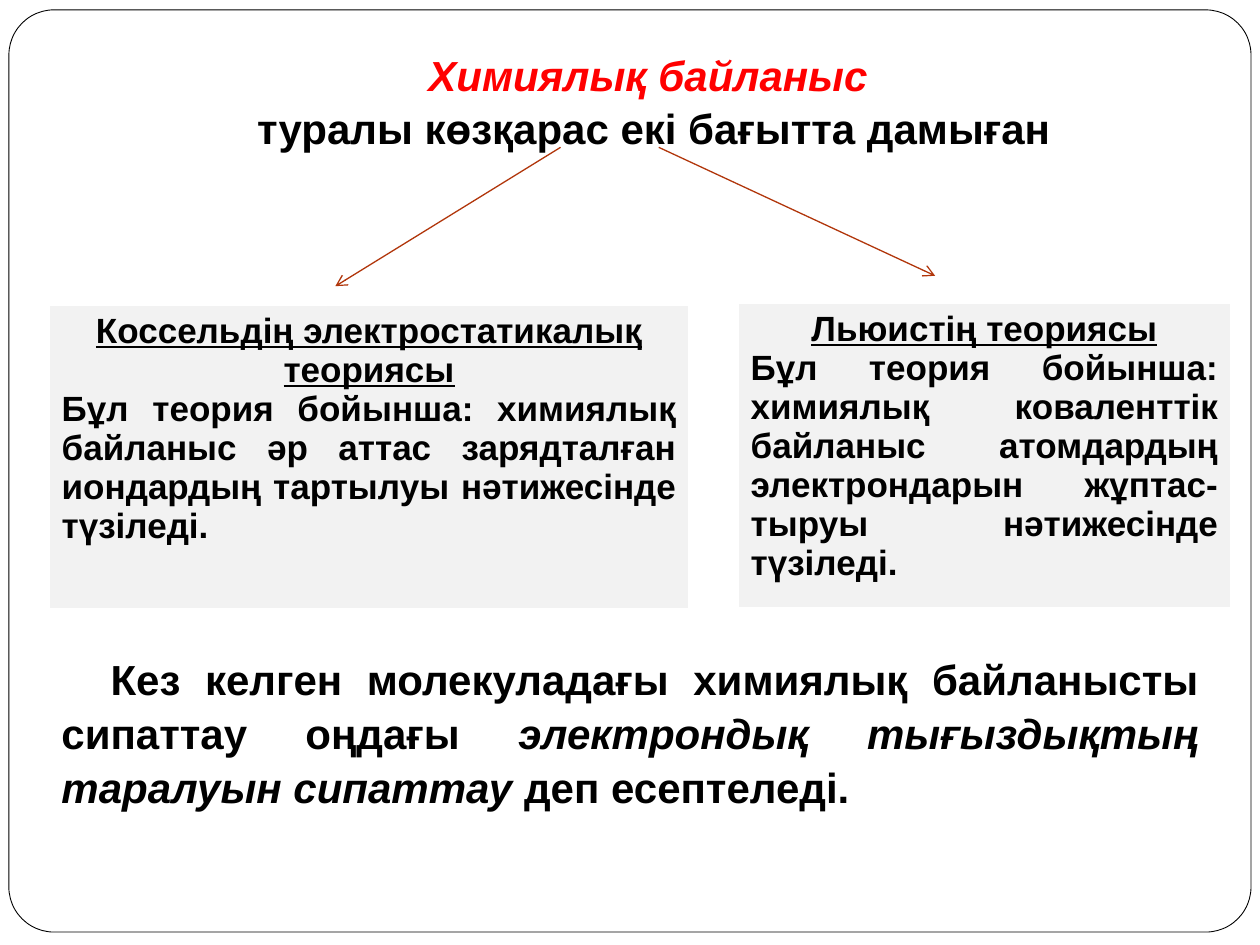
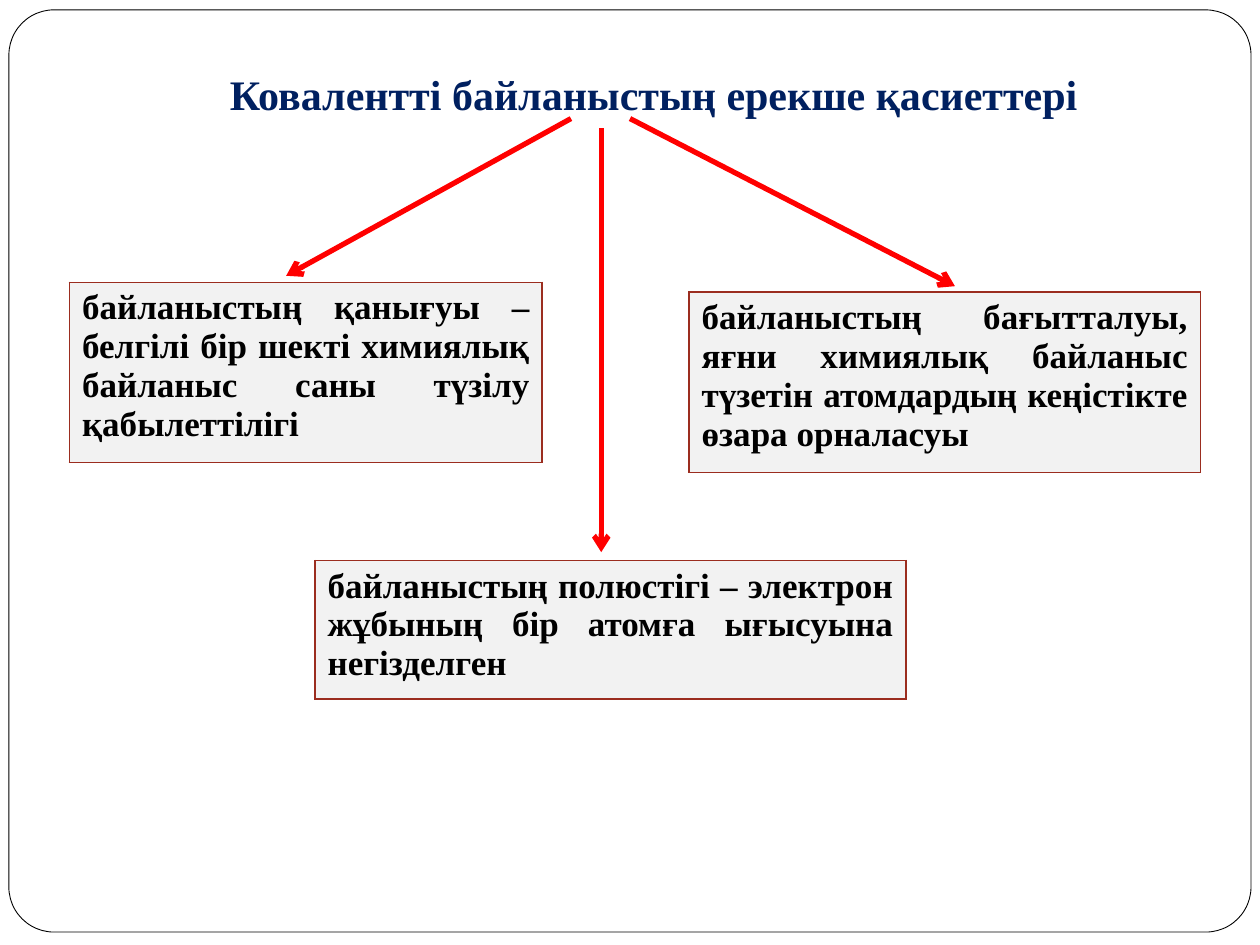
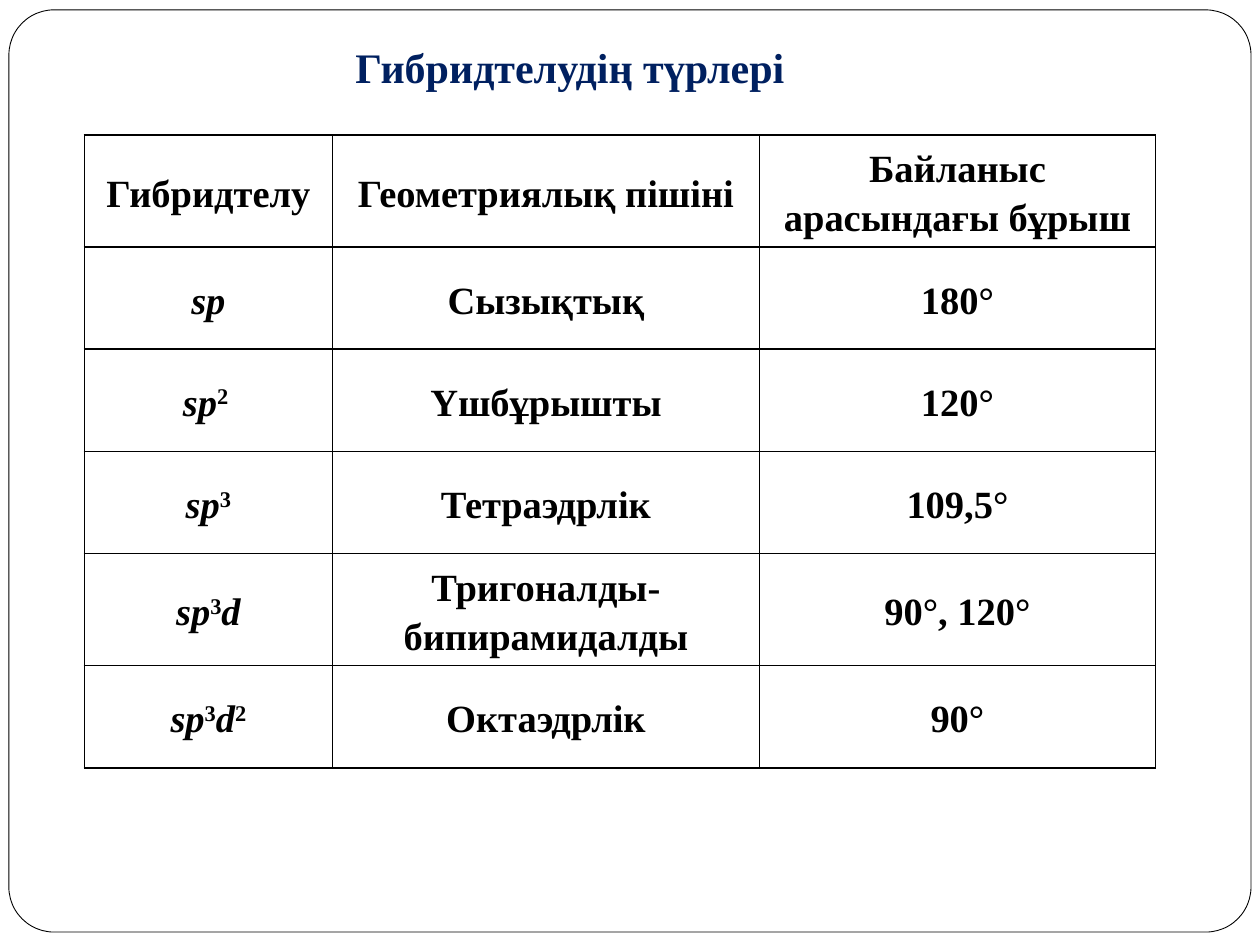
from itertools import groupby

from lxml import etree
from pptx import Presentation
from pptx.dml.color import RGBColor
from pptx.enum.shapes import MSO_CONNECTOR, MSO_SHAPE
from pptx.enum.text import MSO_ANCHOR, MSO_AUTO_SIZE, PP_ALIGN
from pptx.oxml.ns import qn
from pptx.util import Cm, Pt

BLACK = RGBColor(0x00, 0x00, 0x00)
WHITE = RGBColor(0xFF, 0xFF, 0xFF)
RED = RGBColor(0xFF, 0x00, 0x00)
NAVY = RGBColor(0x00, 0x20, 0x60)
RUST = RGBColor(0xB1, 0x36, 0x0B)
BRICK = RGBColor(0x9B, 0x2D, 0x1F)
PALE_GREY = RGBColor(0xF2, 0xF2, 0xF2)

SANS = "Arial"
SERIF = "Times New Roman"
TITLE_ONLY = 5
LEFT, CENTER, JUSTIFY = PP_ALIGN.LEFT, PP_ALIGN.CENTER, PP_ALIGN.JUSTIFY
TOP, MIDDLE, BOTTOM = MSO_ANCHOR.TOP, MSO_ANCHOR.MIDDLE, MSO_ANCHOR.BOTTOM
STRAIGHT = MSO_CONNECTOR.STRAIGHT
ROUNDED = MSO_SHAPE.ROUNDED_RECTANGLE
NO_AUTOFIT = MSO_AUTO_SIZE.NONE


def add_span(para, text, font=SANS, size=24, color=BLACK, italic=False,
             underline=False, raised=False):
    span = para.add_run()
    span.text = text
    span.font.name = font
    span.font.size = Pt(size)
    span.font.color.rgb = color
    span.font.bold = True
    span.font.italic = italic
    span.font.underline = underline
    if raised:
        span.font._element.set("baseline", "30000")


def add_paragraph(frame, spans, align=JUSTIFY, spacing=None, indent=0, **text_format):
    first = frame.paragraphs[0]
    para = frame.add_paragraph() if first.runs else first
    para.alignment = align
    para.line_spacing = spacing
    para.space_before = Pt(0)
    if indent:
        para._p.get_or_add_pPr().set("indent", str(Cm(indent)))
    for text, changes in spans:
        add_span(para, text, **{**text_format, **changes})


def set_title(page, area, lines, align=CENTER, spacing=1.07, anchor=TOP, **text_format):
    title = page.shapes.title
    title.left, title.top, title.width, title.height = map(Cm, area)
    frame = title.text_frame
    frame.word_wrap = True
    frame.auto_size = NO_AUTOFIT
    frame.vertical_anchor = anchor
    for line in lines:
        add_paragraph(frame, [line], align, spacing, **text_format)
    return frame


def add_frame_to_master(deck, page):
    outline = page.shapes.add_shape(ROUNDED, Cm(0.18), Cm(0.2), Cm(25.04), Cm(18.59))
    outline.adjustments[0] = 0.049
    outline.shadow.inherit = False
    outline.fill.solid()
    outline.fill.fore_color.rgb = WHITE
    outline.line.color.rgb = BLACK
    outline.line.width = Pt(0.5)
    outline.element.nvSpPr.cNvPr.set("id", "20")
    deck.slide_master.shapes.element.insert(2, outline.element)


def add_arrow(page, start, end, color, width):
    arrow = page.shapes.add_connector(STRAIGHT, *map(Cm, start + end))
    arrow.line.color.rgb = color
    arrow.line.width = Pt(width)
    properties = arrow.element.spPr
    etree.SubElement(properties.find(qn("a:ln")), qn("a:tailEnd"), type="arrow")
    etree.SubElement(properties, qn("a:effectLst"))


def set_borders(cell, color, width=1, bottom=1):
    properties = cell._tc.get_or_add_tcPr()
    sides = {"lnL": width, "lnR": width, "lnT": width, "lnB": bottom}
    for index, (side, points) in enumerate(sides.items()):
        line = etree.Element(qn(f"a:{side}"), w=str(Pt(points)))
        fill = etree.SubElement(line, qn("a:solidFill"))
        etree.SubElement(fill, qn("a:srgbClr"), val=str(color))
        properties.insert(index, line)


def add_plain_table(page, left, top, widths, heights):
    table = page.shapes.add_table(
        len(heights), len(widths), Cm(left), Cm(top),
        Cm(sum(widths)), Cm(sum(heights))).table
    table.first_row = False
    table.horz_banding = False
    for column, width in zip(table.columns, widths):
        column.width = Cm(width)
    for row, height in zip(table.rows, heights):
        row.height = Cm(height)
    return table


def add_panel(page, area, text, border, bottom=1, heading=None, font=SANS):
    left, top, width, height = area
    cell = add_plain_table(page, left, top, [width], [height]).cell(0, 0)
    cell.fill.solid()
    cell.fill.fore_color.rgb = PALE_GREY
    set_borders(cell, border, bottom=bottom)
    if heading:
        add_paragraph(cell.text_frame, [(heading, {"underline": True})], CENTER,
                      font=font, size=20)
    add_paragraph(cell.text_frame, [(text, {})], font=font, size=20)


def split_formula(formula):
    for is_letter, letters in groupby(formula, str.isalpha):
        yield "".join(letters), {"italic": is_letter, "raised": not is_letter}


def fill_grid_cell(cell, spans):
    cell.fill.background()
    set_borders(cell, BLACK)
    cell.vertical_anchor = MIDDLE
    cell.margin_left = cell.margin_right = Cm(0.05)
    cell.margin_top = cell.margin_bottom = Cm(0.05)
    add_paragraph(cell.text_frame, spans, CENTER, 1.15, font=SERIF, size=22)


def build_theories(page):
    set_title(page, (1.48, 0.79, 23.4, 2.2), [
        ("Химиялық байланыс ", {"color": RED, "italic": True}),
        ("туралы көзқарас екі бағытта дамыған", {}),
    ])
    add_arrow(page, (11.3, 2.97), (6.76, 5.77), RUST, 0.75)
    add_arrow(page, (13.28, 2.97), (18.85, 5.56), RUST, 0.75)
    add_panel(page, (0.99, 6.15, 12.9, 6.15),
              "Бұл теория бойынша: химиялық байланыс әр аттас зарядталған "
              "иондардың тартылуы нәтижесінде түзіледі.",
              WHITE, 3, "Коссельдің электростатикалық теориясы")
    add_panel(page, (14.88, 6.12, 9.93, 6.17),
              "Бұл теория бойынша: химиялық коваленттік байланыс атомдардың "
              "электрондарын жұптас-тыруы нәтижесінде түзіледі.",
              WHITE, 3, "Льюистің теориясы")
    box = page.shapes.add_textbox(Cm(0.99), Cm(12.98), Cm(23.42), Cm(3.5))
    box.text_frame.word_wrap = True
    add_paragraph(box.text_frame, [
        ("Кез келген молекуладағы химиялық байланысты сипаттау оңдағы ", {}),
        ("электрондық тығыздықтың таралуын сипаттау", {"italic": True}),
        (" деп есептеледі.", {}),
    ], spacing=1.07, indent=0.99)


def build_properties(page):
    set_title(page, (1.75, 1.19, 22.86, 1.3),
              [("Ковалентті байланыстың ерекше қасиеттері", {})],
              font=SERIF, color=NAVY)
    panels = [
        ((13.89, 5.89, 10.31, 3.63),
         "байланыстың бағытталуы, яғни химиялық байланыс түзетін атомдардың "
         "кеңістікте өзара орналасуы"),
        ((1.4, 5.69, 9.53, 3.63),
         "байланыстың қанығуы – белгілі бір шекті химиялық байланыс саны "
         "түзілу қабылеттілігі"),
        ((6.35, 11.3, 11.91, 2.79),
         "байланыстың полюстігі – электрон жұбының бір атомға ығысуына "
         "негізделген"),
    ]
    for area, text in panels:
        add_panel(page, area, text, BRICK, font=SERIF)
    arrows = [
        ((11.51, 2.39), (5.77, 5.56)),
        ((12.12, 2.59), (12.12, 11.13)),
        ((12.7, 2.39), (19.25, 5.77)),
    ]
    for start, end in arrows:
        add_arrow(page, start, end, RED, 3)


def build_hybridization(page):
    frame = set_title(page, (6.91, 0.97, 10.59, 1.14),
                      [("Гибридтелудің түрлері", {})], LEFT, None, BOTTOM,
                      font=SERIF, color=NAVY)
    frame.margin_bottom = Cm(0.25)
    header = ["Гибридтелу", "Геометриялық пішіні", "Байланыс арасындағы бұрыш"]
    kinds = [
        ("sp", "Сызықтық", "180°"),
        ("sp2 ", "Үшбұрышты", "120°"),
        ("sp3", "Тетраэдрлік", "109,5°"),
        ("sp3d", "Тригоналды-бипирамидалды", "90°, 120°"),
        ("sp3d2", "Октаэдрлік", "90°"),
    ]
    table = add_plain_table(page, 1.7, 2.72, [5, 8.61, 7.98],
                            [2.26, 2.06, 2.06, 2.06, 2.26, 2.06])
    for column, text in enumerate(header):
        fill_grid_cell(table.cell(0, column), [(text, {})])
    for row, (formula, geometry, angle) in enumerate(kinds, 1):
        fill_grid_cell(table.cell(row, 0), split_formula(formula))
        fill_grid_cell(table.cell(row, 1), [(geometry, {})])
        fill_grid_cell(table.cell(row, 2), [(angle, {})])


def main():
    deck = Presentation()
    deck.slide_width, deck.slide_height = Cm(25.4), Cm(19.05)
    builders = [build_theories, build_properties, build_hybridization]
    pages = [deck.slides.add_slide(deck.slide_layouts[TITLE_ONLY]) for _ in builders]
    add_frame_to_master(deck, pages[0])
    for build, page in zip(builders, pages):
        build(page)
    deck.save("out.pptx")


if __name__ == "__main__":
    main()
